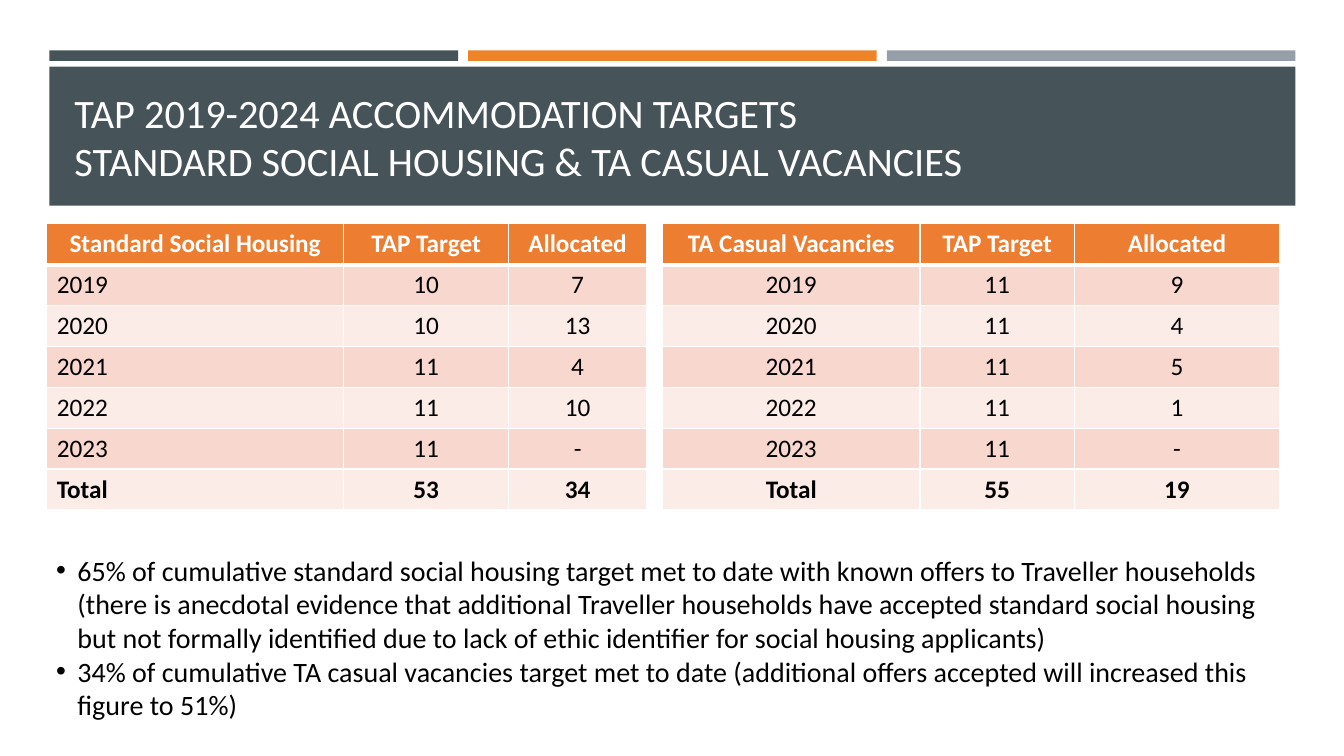
from lxml import etree
from pptx import Presentation
from pptx import util as u
from pptx.dml.color import RGBColor
from pptx.enum import shapes, text
from pptx.oxml import ns

SLATE, ORANGE, GREY = "465359", "ED8428", "969FA7"
HEADER, ROW_DARK, ROW_LIGHT = "ED7D31", "F8D7CE", "FCECE8"
WHITE, BLACK = "FFFFFF", "000000"
LEFT, CENTER = text.PP_ALIGN.LEFT, text.PP_ALIGN.CENTER


def rgb(value):
    return RGBColor.from_string(value)


class Deck:
    """Style and current slide; lengths are percentages of the slide's size."""

    font = "Calibri"

    def __init__(self, width, height):
        self.prs = Presentation()
        self.prs.slide_width, self.prs.slide_height = u.Inches(width), u.Inches(height)
        self.s = self.prs.slides.add_slide(self.prs.slide_layouts[6])

    def x(self, share):
        return u.Emu(round(self.prs.slide_width * share / 100))

    def y(self, share):
        return u.Emu(round(self.prs.slide_height * share / 100))

    def box(self, left, top, width, height):
        return self.x(left), self.y(top), self.x(width), self.y(height)

    def style(self, p, size, color, bold=False, align=LEFT):
        p.alignment = align
        for r in p.runs:
            r.font.name, r.font.size, r.font.bold = self.font, u.Pt(size), bold
            r.font.color.rgb = rgb(color)

    def rect(self, left, top, width, height, fill):
        sp = self.s.shapes.add_shape(shapes.MSO_SHAPE.RECTANGLE, *self.box(left, top, width, height))
        sp.shadow.inherit = False
        sp.fill.solid()
        sp.fill.fore_color.rgb = rgb(fill)
        sp.line.fill.background()

    def text(self, left, top, width, height, paragraphs, size, color,
             anchor=text.MSO_ANCHOR.TOP, bullet=None):
        tf = self.s.shapes.add_textbox(*self.box(left, top, width, height)).text_frame
        tf.word_wrap, tf.vertical_anchor = True, anchor
        for i, words in enumerate(paragraphs):
            p = tf.add_paragraph() if i else tf.paragraphs[0]
            p.text = words
            self.style(p, size, color)
            if bullet:
                self.bullet(p, bullet)

    def bullet(self, p, char):
        pPr = p._p.get_or_add_pPr()
        indent = u.Inches(0.21)
        pPr.set("marL", str(indent))
        pPr.set("indent", str(-indent))
        etree.SubElement(pPr, ns.qn("a:buFont"), typeface="Arial")
        etree.SubElement(pPr, ns.qn("a:buChar"), char=char)

    def border(self, cell, side, width):
        ln = etree.SubElement(cell._tc.get_or_add_tcPr(), ns.qn(f"a:ln{side}"), w=str(u.Pt(width)))
        fill = etree.SubElement(ln, ns.qn("a:solidFill"))
        etree.SubElement(fill, ns.qn("a:srgbClr"), val=WHITE)

    def table(self, left, top, widths, row_height, rows, label_align):
        frame = self.s.shapes.add_table(
            len(rows), len(widths), *self.box(left, top, sum(widths), row_height * len(rows)))
        tbl = frame.table
        for column, width in zip(tbl.columns, widths):
            column.width = self.x(width)
        for i, row in enumerate(rows):
            tbl.rows[i].height = self.y(row_height)
            header, total = i == 0, i == len(rows) - 1
            for j, words in enumerate(row):
                cell = tbl.cell(i, j)
                for side in "LRTB":
                    thick = (i, side) in ((0, "B"), (1, "T"))
                    self.border(cell, side, 3 if thick else 1)
                cell.fill.solid()
                cell.fill.fore_color.rgb = rgb(HEADER if header else ROW_DARK if i % 2 else ROW_LIGHT)
                p = cell.text_frame.paragraphs[0]
                p.text = words
                align = CENTER if header or j else label_align
                self.style(p, 18, WHITE if header else BLACK, header or total, align)


def main():
    deck = Deck(13.33, 7.5)

    for i, color in enumerate((SLATE, ORANGE, GREY)):
        deck.rect(3.68 + 31.15 * i, 6.67, 30.4, 1.4, color)
    deck.rect(3.68, 8.8, 92.7, 18.4, SLATE)
    deck.text(4.8, 10.67, 90.45, 14.4,
              ["TAP 2019-2024 ACCOMMODATION TARGETS\nSTANDARD SOCIAL HOUSING & TA CASUAL VACANCIES"],
              28.8, WHITE, anchor=text.MSO_ANCHOR.BOTTOM)

    labels = ("2019", "2020", "2021", "2022", "2023", "Total")
    tables = (
        ("Standard Social Housing", 3.48, (22.1, 12.25, 10.3), LEFT,
         ("10", "10", "11", "11", "11", "53"), ("7", "13", "4", "10", "-", "34")),
        ("TA Casual Vacancies", 49.3, (19.15, 11.48, 15.3), CENTER,
         ("11", "11", "11", "11", "11", "55"), ("9", "4", "5", "1", "-", "19")),
    )
    for name, left, widths, label_align, targets, allocated in tables:
        rows = [(name, "TAP Target", "Allocated"), *zip(labels, targets, allocated)]
        deck.table(left, 29.6, widths, 5.41, rows, label_align)

    deck.text(3.45, 72.53, 91.8, 27.4, [
        "65% of cumulative standard social housing target met to date with known offers to "
        "Traveller households (there is anecdotal evidence that additional Traveller households "
        "have accepted standard social housing but not formally identified due to lack of ethic "
        "identifier for social housing applicants)",
        "34% of cumulative TA casual vacancies target met to date (additional offers accepted "
        "will increased this figure to 51%)",
    ], 20, BLACK, bullet="•")

    deck.prs.save("out.pptx")


if __name__ == "__main__":
    main()
